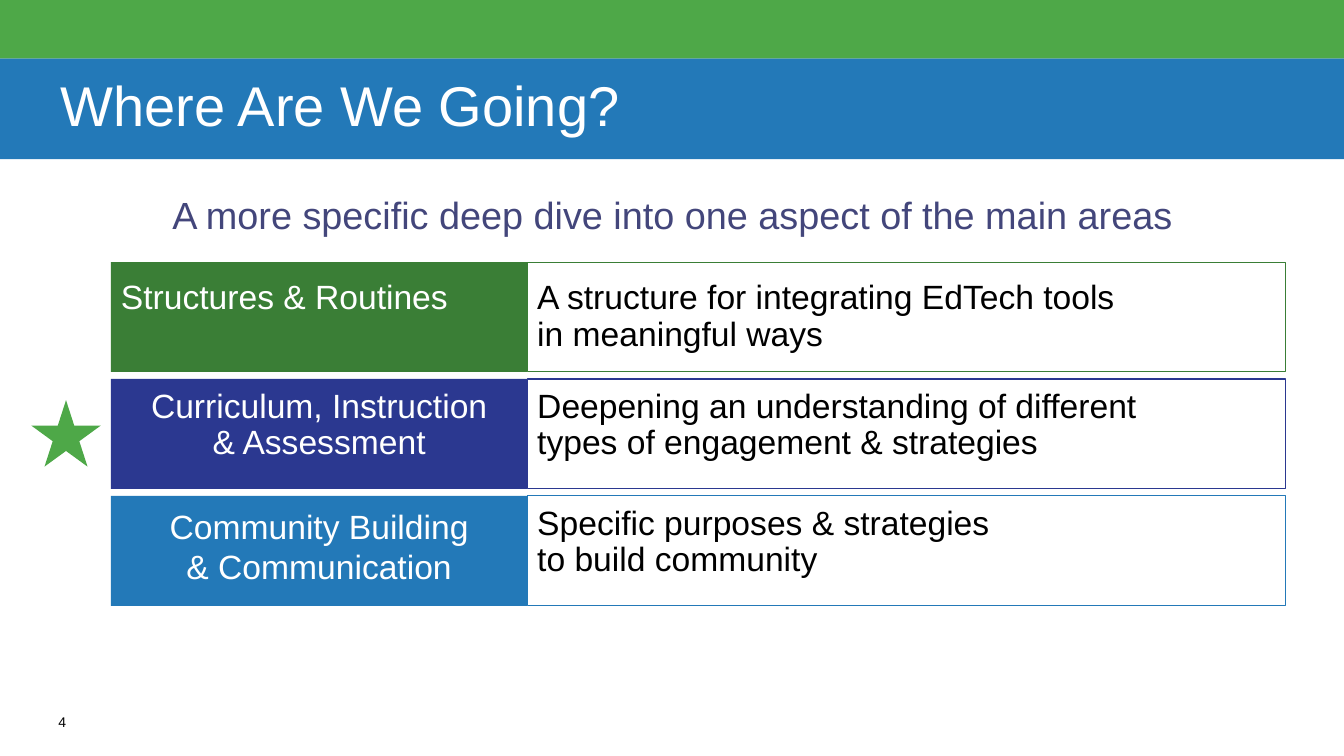
from lxml.etree import SubElement
from pptx import Presentation
from pptx.dml.color import RGBColor
from pptx.enum.shapes import MSO_SHAPE
from pptx.enum.text import MSO_ANCHOR, MSO_AUTO_SIZE, PP_ALIGN
from pptx.oxml.ns import qn
from pptx.util import Pt

PX = 9144
SLIDE_W, SLIDE_H = 1333, 750
FONT = "Arial"
WHITE = RGBColor(0xFF, 0xFF, 0xFF)
BLACK = RGBColor(0x00, 0x00, 0x00)
GREEN = RGBColor(0x4E, 0xA8, 0x48)
DARK_GREEN = RGBColor(0x3A, 0x7E, 0x36)
BLUE = RGBColor(0x23, 0x79, 0xB8)
NAVY = RGBColor(0x2B, 0x38, 0x90)
PURPLE = RGBColor(0x43, 0x46, 0x7B)

LABEL_W = 413
ROW_H = 109
ROW_PITCH = 116
AREAS = [
    (DARK_GREEN, "Structures & Routines",
     "A structure for integrating EdTech tools\nin meaningful ways",
     {"align": PP_ALIGN.LEFT, "insets": (10, 14, 10, 10)},
     {"anchor": MSO_ANCHOR.MIDDLE}),
    (NAVY, "Curriculum, Instruction\n& Assessment",
     "Deepening an understanding of different\ntypes of engagement & strategies",
     {"align": PP_ALIGN.CENTER, "spacing": 0.9}, {}),
    (BLUE, "Community Building\n& Communication",
     "Specific purposes & strategies\nto build community",
     {"align": PP_ALIGN.CENTER}, {}),
]


def emu(box):
    return [length * PX for length in box]


def write(shape, text, size=24, color=WHITE, align=PP_ALIGN.LEFT,
          anchor=MSO_ANCHOR.TOP, insets=(10, 10, 10, 10), spacing=1.0):
    frame = shape.text_frame
    frame.word_wrap = True
    frame.auto_size = MSO_AUTO_SIZE.NONE
    frame.vertical_anchor = anchor
    (frame.margin_left, frame.margin_top,
     frame.margin_right, frame.margin_bottom) = emu(insets)
    paragraph = frame.paragraphs[0]
    paragraph.alignment = align
    paragraph.line_spacing = spacing
    paragraph.space_before = Pt(0)
    if shape.is_placeholder:
        properties = paragraph._p.get_or_add_pPr()
        properties.set("marL", "0")
        properties.set("indent", "0")
        SubElement(properties, qn("a:buNone"))
    for number, line in enumerate(text.split("\n")):
        if number:
            paragraph.add_line_break()
        run = paragraph.add_run()
        run.text = line
        run.font.name = FONT
        run.font.size = Pt(size)
        run.font.bold = False
        run.font.color.rgb = color


def place(placeholder, box, fill):
    placeholder.left, placeholder.top, placeholder.width, placeholder.height = emu(box)
    placeholder.fill.solid()
    placeholder.fill.fore_color.rgb = fill
    return placeholder


def add_block(slide, kind, box, fill, outline=None):
    block = slide.shapes.add_shape(kind, *emu(box))
    block.shadow.inherit = False
    block.fill.solid()
    block.fill.fore_color.rgb = fill
    if outline is None:
        block.line.fill.background()
    else:
        block.line.color.rgb = outline
        block.line.width = Pt(0.75)
    return block


def add_text(slide, box, text, **style):
    write(slide.shapes.add_textbox(*emu(box)), text, **style)


def build_header(slide, left, top, width, height):
    stripe_h = height - 100
    add_block(slide, MSO_SHAPE.RECTANGLE, (left, top, width, stripe_h), GREEN)
    title = place(slide.shapes.title, (left, top + stripe_h, width, 100), BLUE)
    write(title, "Where Are We Going?", size=40, anchor=MSO_ANCHOR.MIDDLE,
          insets=(60, 0, 60, 0), spacing=0.9)


def build_area(slide, placeholder, left, top, width, height, area):
    color, label, goal, label_style, goal_style = area
    write(place(placeholder, (left, top, LABEL_W, height), color), label, **label_style)
    goal_box = add_block(slide, MSO_SHAPE.RECTANGLE,
                         (left + LABEL_W, top, width - LABEL_W, height), WHITE, color)
    write(goal_box, goal, color=BLACK, spacing=0.9, **goal_style)


def build_areas(slide, left, top, width):
    bodies = [p for p in slide.placeholders if p.placeholder_format.idx > 0]
    for row, (body, area) in enumerate(zip(bodies, AREAS)):
        build_area(slide, body, left, top + row * ROW_PITCH, width, ROW_H, area)
    for unused in bodies[len(AREAS):]:
        unused.element.getparent().remove(unused.element)
    add_block(slide, MSO_SHAPE.STAR_5_POINT,
              (left - 79, top + ROW_PITCH + 21, 69, 66), GREEN)


def main():
    deck = Presentation()
    deck.slide_width, deck.slide_height = emu((SLIDE_W, SLIDE_H))
    slide = deck.slides.add_slide(deck.slide_layouts.get_by_name("Comparison"))
    build_header(slide, 0, 0, SLIDE_W, 158)
    add_text(slide, (32, 180, 1270, 66),
             "A more specific deep dive into one aspect of the main areas",
             size=27, color=PURPLE, align=PP_ALIGN.CENTER)
    build_areas(slide, 110, 260, 1165)
    add_text(slide, (58, 708, 42, 25), "4", size=10, color=BLACK, insets=(0, 0, 0, 0))
    deck.save("out.pptx")


if __name__ == "__main__":
    main()
